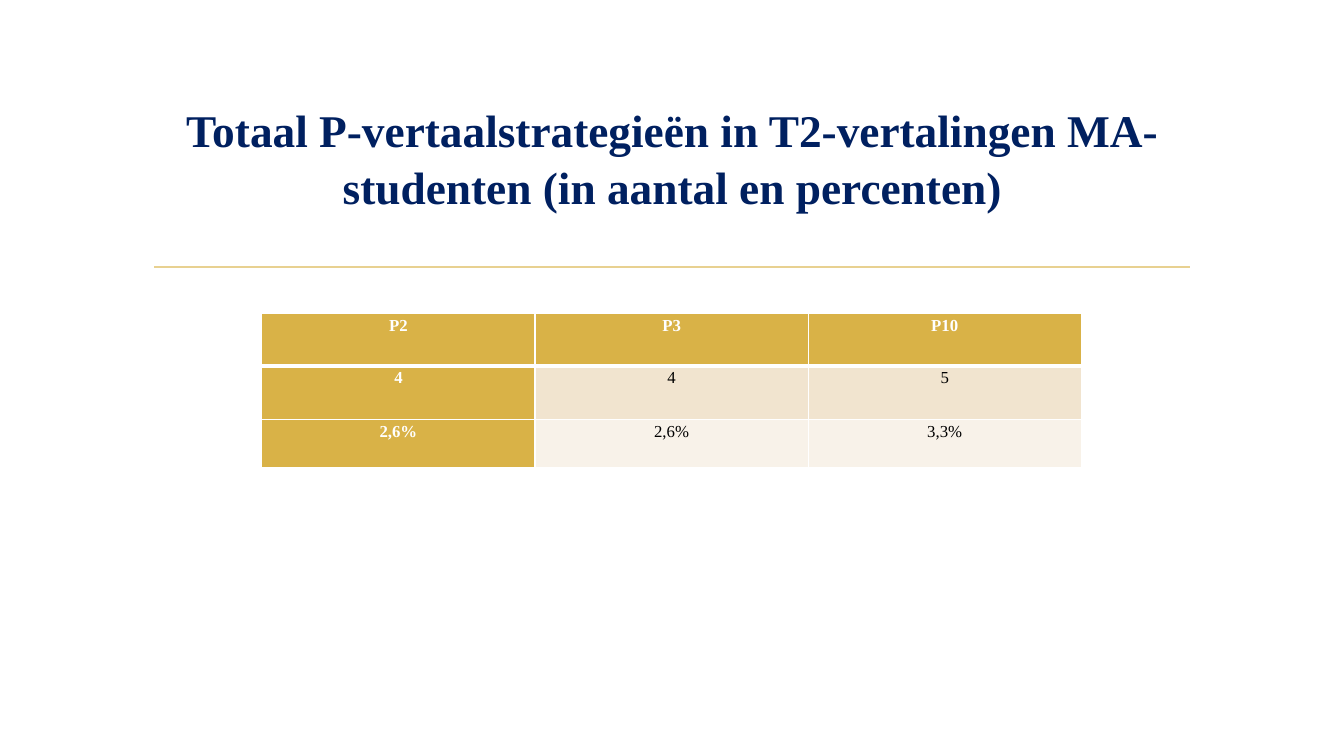
from lxml.etree import SubElement
from pptx import Presentation
from pptx.dml.color import RGBColor
from pptx.enum.shapes import MSO_CONNECTOR
from pptx.enum.text import MSO_ANCHOR, PP_ALIGN
from pptx.oxml.ns import qn
from pptx.util import Cm, Pt

NAVY = RGBColor(0x00, 0x20, 0x60)
GOLD = RGBColor(0xD9, 0xB2, 0x47)
PALE_GOLD = RGBColor(0xE8, 0xD1, 0x91)
SAND = RGBColor(0xF1, 0xE4, 0xCF)
CREAM = RGBColor(0xF8, 0xF2, 0xE9)
WHITE = RGBColor(0xFF, 0xFF, 0xFF)
BLACK = RGBColor(0x00, 0x00, 0x00)

TITLE = "Totaal P-vertaalstrategieën in T2-vertalingen MA-studenten (in aantal en percenten)"
STRATEGIES = [
    ["P2", "P3", "P10"],
    ["4", "4", "5"],
    ["2,6%", "2,6%", "3,3%"],
]
ROW_HEIGHTS = [1.32, 1.35, 1.22]
ROW_FILLS = [GOLD, SAND, CREAM]


def set_all(target, values):
    for name, value in values.items():
        setattr(target, name, value)


def write(para, text, size, color, bold, spacing):
    set_all(para, {"alignment": PP_ALIGN.CENTER, "line_spacing": spacing})
    span = para.add_run()
    span.text = text
    set_all(span.font, {"name": "Times New Roman", "size": Pt(size), "bold": bold})
    span.font.color.rgb = color


def add_title(page, left, top, width, height):
    frame = page.shapes.add_textbox(Cm(left), Cm(top), Cm(width), Cm(height)).text_frame
    set_all(frame, {"word_wrap": True, "vertical_anchor": MSO_ANCHOR.MIDDLE,
                    "margin_bottom": Cm(1.32)})
    write(frame.paragraphs[0], TITLE, 32.4, NAVY, True, 1.05)


def add_rule(page, left, top, width):
    rule = page.shapes.add_connector(
        MSO_CONNECTOR.STRAIGHT, Cm(left), Cm(top), Cm(left + width), Cm(top))
    rule.line.color.rgb = PALE_GOLD
    rule.line.width = Pt(1.25)
    SubElement(rule._element.spPr, qn("a:effectLst"))


def add_borders(cell, widths):
    """Draw white cell borders; widths are points by side: L, R, T, B."""
    properties = cell._tc.get_or_add_tcPr()
    for side, width in widths.items():
        line = SubElement(properties, qn(f"a:ln{side}"), w=str(Pt(width)))
        fill = SubElement(line, qn("a:solidFill"))
        SubElement(fill, qn("a:srgbClr"), val=str(WHITE))


def add_strategy_table(page, left, top, width):
    table = page.shapes.add_table(
        len(STRATEGIES), len(STRATEGIES[0]), Cm(left), Cm(top),
        Cm(width), Cm(sum(ROW_HEIGHTS))).table
    set_all(table, {"first_col": True, "horz_banding": False})
    for row_index, texts in enumerate(STRATEGIES):
        table.rows[row_index].height = Cm(ROW_HEIGHTS[row_index])
        for column_index, text in enumerate(texts):
            cell = table.cell(row_index, column_index)
            heading = row_index == 0 or column_index == 0
            set_all(cell, {"margin_left": Cm(0.18), "margin_right": Cm(0.18),
                           "margin_top": 0, "margin_bottom": 0})
            add_borders(cell, {"L": 1, "R": 1, "T": 3 if row_index == 1 else 1,
                               "B": 3 if row_index == 0 else 1})
            cell.fill.solid()
            cell.fill.fore_color.rgb = GOLD if heading else ROW_FILLS[row_index]
            write(cell.text_frame.paragraphs[0], text, 12,
                  WHITE if heading else BLACK, heading, 1.15)


def main():
    deck = Presentation()
    set_all(deck, {"slide_width": Cm(33.87), "slide_height": Cm(19.05)})
    page = deck.slides.add_slide(deck.slide_layouts[6])
    add_rule(page, 3.89, 6.73, 26.11)
    add_title(page, 3.61, 2.72, 26.67, 3.63)
    add_strategy_table(page, 6.6, 7.9, 20.65)
    deck.save("out.pptx")


if __name__ == "__main__":
    main()
